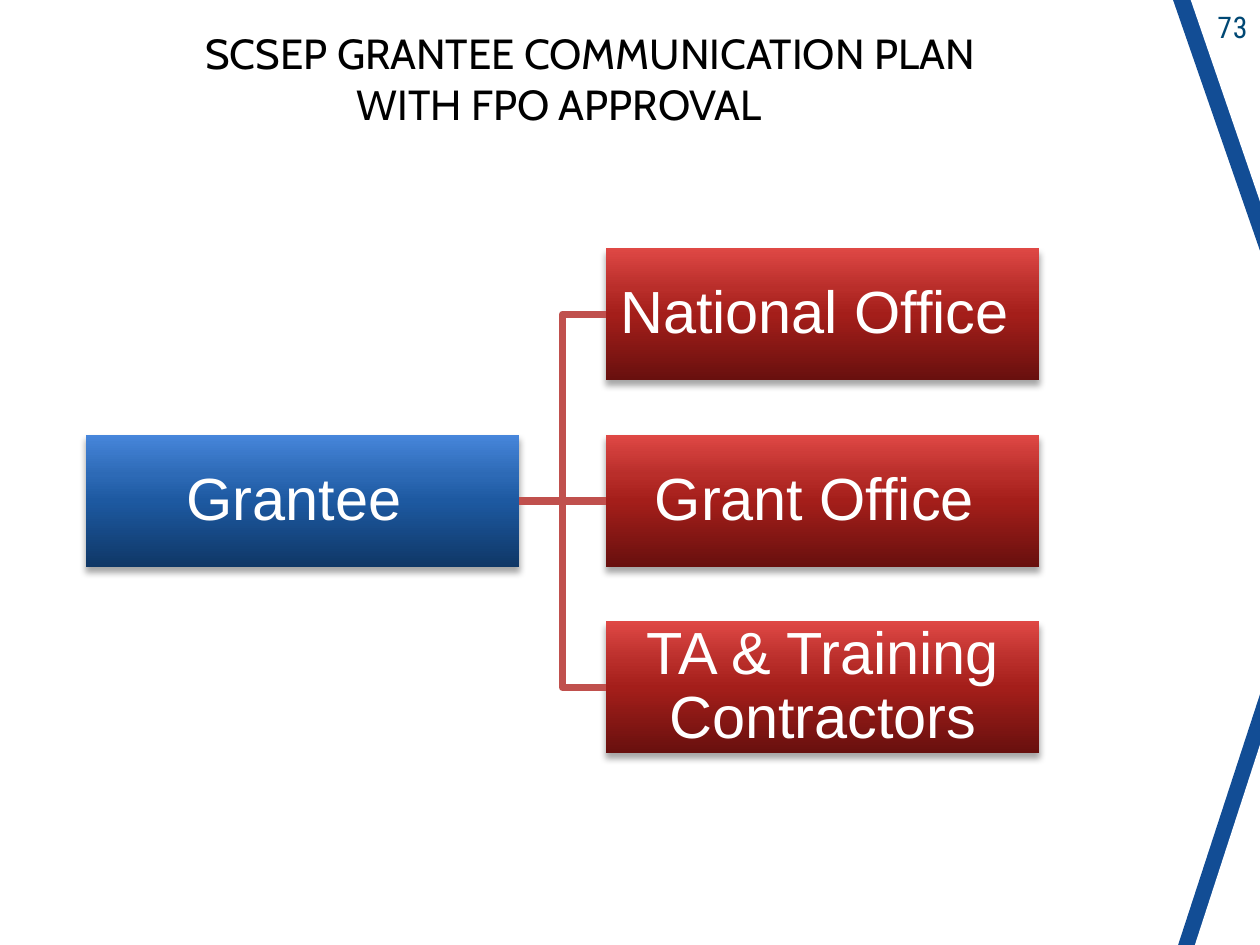
from dataclasses import dataclass

from lxml import etree
from pptx import Presentation, util as u
from pptx.dml.color import RGBColor
from pptx.enum import shapes, text
from pptx.oxml.ns import qn


@dataclass(frozen=True)
class Theme:
    band: str = "124D95"
    paper: str = "FFFFFF"
    ink: str = "000000"
    number: str = "004874"
    link: str = "C0504D"
    blues: tuple = ("0F3766", "1D59A1", "2D6AB6", "4786DB")
    reds: tuple = ("68100E", "A41E1A", "B92E2A", "DF4845")
    stops: tuple = (0, 50, 70, 100)
    title_font: str = "Cabin"
    node_font: str = "Arial"
    number_font: str = "Roboto Condensed"
    title_size: int = 24
    node_size: int = 34
    number_size: int = 17
    link_width: float = 4.33


@dataclass(frozen=True)
class Node:
    label: str
    left: float
    top: float
    shades: tuple


@dataclass(frozen=True)
class Corner:
    left: float
    top: float
    height: float
    color: str
    points_down: bool


THEME = Theme()
PAGE_WIDTH, PAGE_HEIGHT = 10, 7.5
NODE_WIDTH, NODE_HEIGHT = 3.44, 1.05
OFFICE_LEFT, OFFICE_TOP, OFFICE_STEP = 4.81, 1.97, 1.48

GRANTEE = Node("Grantee ", 0.68, OFFICE_TOP + OFFICE_STEP, THEME.blues)
OFFICES = [
    Node(label, OFFICE_LEFT, OFFICE_TOP + row * OFFICE_STEP, THEME.reds)
    for row, label in enumerate(
        ["National Office ", "Grant Office ", "TA & Training Contractors"])
]
CORNERS = [
    Corner(9.31, 0, 1.99, THEME.band, True),
    Corner(9.45, 0, 1.6, THEME.paper, True),
    Corner(9.35, 5.51, 1.99, THEME.band, False),
    Corner(9.48, 5.91, 1.6, THEME.paper, False),
]
TITLE_LINES = [("SCSEP GRANTEE COMMUNICATION PLAN", 0.6),
               ("WITH FPO APPROVAL", 1.8)]


def write(para, words: str, *, font: str, size: float, color: str,
          align=text.PP_ALIGN.LEFT, line_spacing: float = 1.0,
          tracking: float = 0, indent: float = 0) -> None:
    """Add formatted words; tracking is in points and indent in inches."""
    para.alignment = align
    para.line_spacing = line_spacing
    if indent:
        properties = para._p.get_or_add_pPr()
        properties.set("marL", str(u.Inches(indent)))
        properties.set("indent", "0")
    span = para.add_run()
    span.text = words
    span.font.name = font
    span.font.size = u.Pt(size)
    span.font.color.rgb = RGBColor.from_string(color)
    if tracking:
        span._r.get_or_add_rPr().set("spc", str(round(tracking * 100)))


def set_gradient(shape, shades: tuple) -> None:
    """Fill the shape from its bottom edge upwards."""
    shape.fill.gradient()
    shape.fill.gradient_angle = 90
    stop_list = shape._element.spPr.find(qn("a:gradFill")).find(qn("a:gsLst"))
    for stop in list(stop_list):
        stop_list.remove(stop)
    for position, shade in zip(THEME.stops, shades):
        stop = etree.SubElement(stop_list, qn("a:gs"), pos=str(position * 1000))
        etree.SubElement(stop, qn("a:srgbClr"), val=shade)


def set_soft_shadow(shape) -> None:
    shape.shadow.inherit = False
    effects = shape._element.spPr.find(qn("a:effectLst"))
    shadow = etree.SubElement(
        effects, qn("a:outerShdw"), blurRad=str(u.Pt(4)), dist=str(u.Pt(3)),
        dir="5400000", rotWithShape="0")
    color = etree.SubElement(shadow, qn("a:srgbClr"), val="000000")
    etree.SubElement(color, qn("a:alpha"), val="35000")


def draw_corner(page, corner: Corner) -> None:
    shape = page.shapes.add_shape(
        shapes.MSO_SHAPE.ISOSCELES_TRIANGLE, u.Inches(corner.left),
        u.Inches(corner.top), u.Inches(PAGE_WIDTH - corner.left),
        u.Inches(corner.height))
    shape.adjustments[0] = 1
    shape.shadow.inherit = False
    shape.fill.solid()
    shape.fill.fore_color.rgb = RGBColor.from_string(corner.color)
    shape.line.fill.background()
    if corner.points_down:
        shape._element.spPr.find(qn("a:xfrm")).set("flipV", "1")


def draw_node(page, node: Node):
    box = page.shapes.add_shape(
        shapes.MSO_SHAPE.RECTANGLE, u.Inches(node.left), u.Inches(node.top),
        u.Inches(NODE_WIDTH), u.Inches(NODE_HEIGHT))
    set_gradient(box, node.shades)
    box.line.fill.background()
    set_soft_shadow(box)
    frame = box.text_frame
    frame.word_wrap = True
    frame.vertical_anchor = text.MSO_ANCHOR.MIDDLE
    frame.margin_left = frame.margin_right = u.Inches(0.02)
    frame.margin_top = frame.margin_bottom = u.Inches(0.02)
    write(frame.paragraphs[0], node.label, font=THEME.node_font,
          size=THEME.node_size, color=THEME.paper,
          align=text.PP_ALIGN.CENTER, line_spacing=0.9)
    return box


def link(page, source, target) -> None:
    """Join the right side of source to the left side of target."""
    level = source.top == target.top
    kind = shapes.MSO_CONNECTOR.STRAIGHT if level else shapes.MSO_CONNECTOR.ELBOW
    line = page.shapes.add_connector(kind, 0, 0, 0, 0)
    line.begin_connect(source, 3)
    line.end_connect(target, 1)
    line.line.color.rgb = RGBColor.from_string(THEME.link)
    line.line.width = u.Pt(THEME.link_width)
    etree.SubElement(line._element.spPr, qn("a:effectLst"))


def draw_title(page) -> None:
    title = page.shapes.title
    title.left, title.top = u.Inches(0.93), u.Inches(0.17)
    title.width, title.height = u.Inches(7.34), u.Inches(0.91)
    frame = title.text_frame
    frame.word_wrap = True
    frame.auto_size = text.MSO_AUTO_SIZE.NONE
    frame.vertical_anchor = text.MSO_ANCHOR.TOP
    for row, (words, indent) in enumerate(TITLE_LINES):
        para = frame.add_paragraph() if row else frame.paragraphs[0]
        write(para, words, font=THEME.title_font, size=THEME.title_size,
              color=THEME.ink, indent=indent)


def draw_page_number(page, number: str) -> None:
    box = page.shapes.add_textbox(
        u.Inches(9.2), u.Inches(0.02), u.Inches(0.8), u.Inches(0.39))
    box.text_frame.word_wrap = True
    write(box.text_frame.paragraphs[0], number, font=THEME.number_font,
          size=THEME.number_size, color=THEME.number,
          align=text.PP_ALIGN.RIGHT, tracking=0.4)


def main() -> None:
    deck = Presentation()
    deck.slide_width = u.Inches(PAGE_WIDTH)
    deck.slide_height = u.Inches(PAGE_HEIGHT)
    page = deck.slides.add_slide(deck.slide_layouts[5])
    for corner in CORNERS:
        draw_corner(page, corner)
    draw_page_number(page, "73")
    grantee = draw_node(page, GRANTEE)
    for office in OFFICES:
        link(page, grantee, draw_node(page, office))
    draw_title(page)
    deck.save("out.pptx")


if __name__ == "__main__":
    main()
